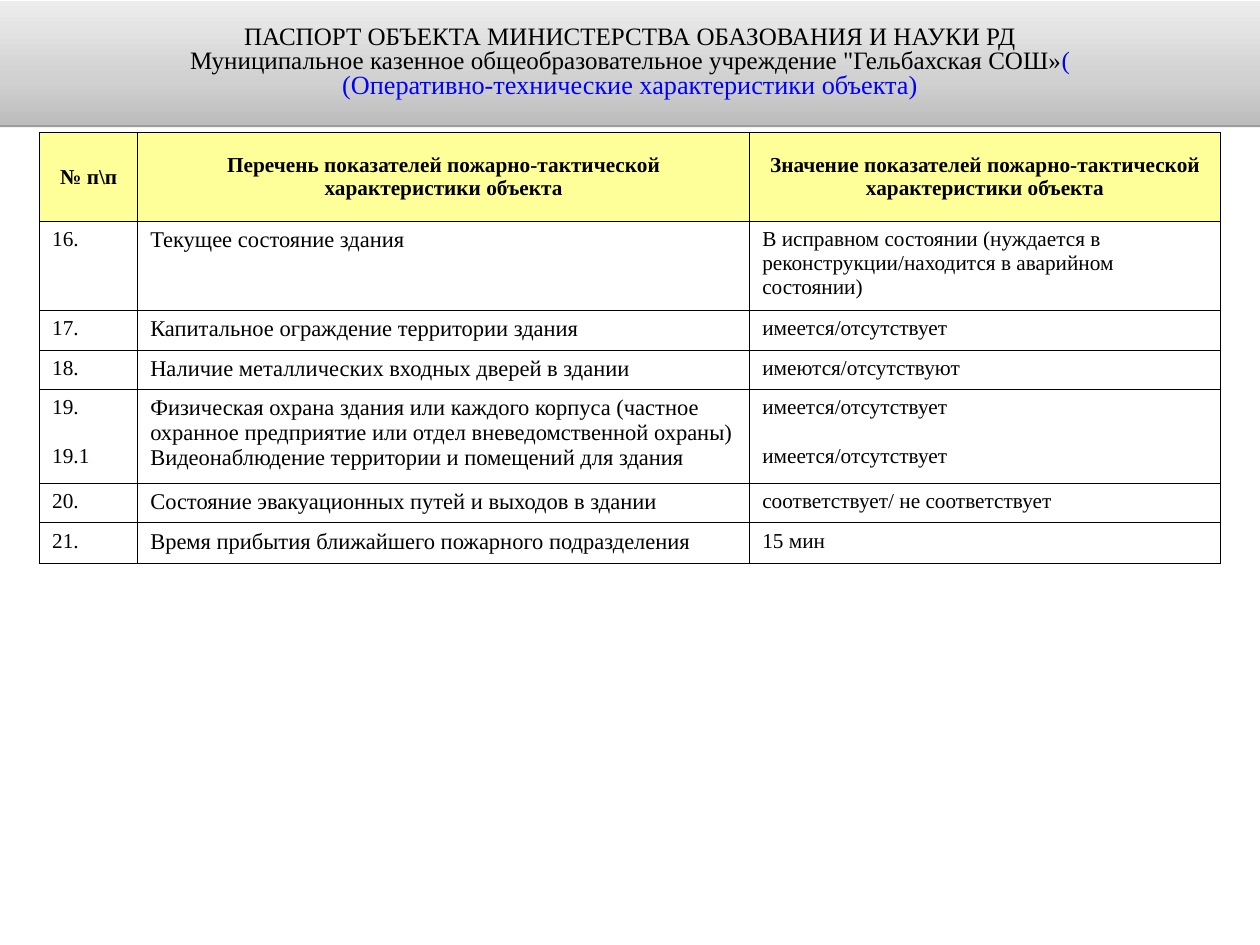
"""Build the fire-safety passport slide: a title band above a table of indicators."""
from dataclasses import dataclass

from lxml.etree import SubElement
from pptx import Presentation
from pptx.dml.color import RGBColor as Rgb
from pptx.enum.text import MSO_ANCHOR as Anchor, MSO_AUTO_SIZE as AutoSize, PP_ALIGN as Align
from pptx.oxml import parse_xml
from pptx.oxml.ns import nsdecls, qn
from pptx.util import Inches, Pt


@dataclass(frozen=True)
class Theme:
    font: str = "Times New Roman"
    ink: str = "000000"
    accent: str = "0000FF"
    header_fill: str = "FFFF99"
    body_fill: str = "FFFFFF"
    band: tuple = ((0, "BCBCBC"), (35, "D0D0D0"), (100, "EDEDED"))
    title_size: int = 20
    subtitle_size: int = 21
    cell_size: int = 17
    indicator_size: int = 18


theme = Theme()


def style_run(run, size, color=theme.ink, bold=False):
    run.font.name = theme.font
    run.font.size = Pt(size)
    run.font.bold = bold
    run.font.color.rgb = Rgb.from_string(color)


def add_borders(cell):
    properties = cell._tc.get_or_add_tcPr()
    for side in ("lnL", "lnR", "lnT", "lnB"):
        line = SubElement(properties, qn(f"a:{side}"), w=str(Pt(1)))
        fill = SubElement(line, qn("a:solidFill"))
        SubElement(fill, qn("a:srgbClr"), val=theme.ink)


prs = Presentation()
prs.slide_width, prs.slide_height = Inches(14), Inches(10.5)
slide = prs.slides.add_slide(prs.slide_layouts[5])

heading = slide.shapes.title
heading.left, heading.top = Inches(0), Inches(0.01)
heading.width, heading.height = Inches(14), Inches(1.38)
stops = "".join(
    f'<a:gs pos="{position * 1000}"><a:srgbClr val="{color}"/></a:gs>'
    for position, color in theme.band
)
heading_properties = heading._element.spPr
heading_properties.append(parse_xml(
    f'<a:gradFill {nsdecls("a")} rotWithShape="1"><a:gsLst>{stops}</a:gsLst>'
    '<a:lin ang="16200000" scaled="0"/></a:gradFill>'
))
heading_properties.append(parse_xml(
    f'<a:effectLst {nsdecls("a")}><a:outerShdw blurRad="0" dist="{Pt(1.6)}" dir="5400000" '
    f'rotWithShape="0"><a:srgbClr val="{theme.ink}"><a:alpha val="38000"/></a:srgbClr>'
    '</a:outerShdw></a:effectLst>'
))

heading_frame = heading.text_frame
heading_frame.word_wrap = True
heading_frame.auto_size = AutoSize.NONE
heading_frame.vertical_anchor = Anchor.MIDDLE
heading_frame.margin_left = heading_frame.margin_right = Inches(0.12)
heading_frame.margin_top = heading_frame.margin_bottom = Inches(0.06)
heading_lines = [
    [("ПАСПОРТ ОБЪЕКТА МИНИСТЕРСТВА ОБАЗОВАНИЯ И НАУКИ РД", theme.title_size, theme.ink)],
    [
        ('Муниципальное казенное общеобразовательное учреждение "Гельбахская СОШ»',
         theme.title_size, theme.ink),
        ("(", theme.title_size, theme.accent),
    ],
    [("(Оперативно-технические характеристики объекта)", theme.subtitle_size, theme.accent)],
]
heading_frame.text = "\n".join("" for _ in heading_lines)
for paragraph, pieces in zip(heading_frame.paragraphs, heading_lines):
    paragraph.alignment = Align.CENTER
    paragraph.line_spacing = 0.8
    paragraph.space_before = Pt(0)
    for words, size, color in pieces:
        run = paragraph.add_run()
        run.text = words
        style_run(run, size, color)

indicators = [
    ("№ п\\п",
     "Перечень показателей пожарно-тактической характеристики объекта",
     "Значение показателей пожарно-тактической характеристики объекта"),
    ("16.", "Текущее состояние здания",
     "В исправном состоянии (нуждается в реконструкции/находится в аварийном состоянии)"),
    ("17.", "Капитальное ограждение территории здания", "имеется/отсутствует"),
    ("18.", "Наличие металлических входных дверей в здании", "имеются/отсутствуют"),
    ("19.\n19.1",
     "Физическая охрана здания или каждого корпуса (частное охранное предприятие "
     "или отдел вневедомственной охраны)\n"
     "Видеонаблюдение территории и помещений для здания",
     "имеется/отсутствует\nимеется/отсутствует"),
    ("20.", "Состояние эвакуационных путей и выходов в здании",
     "соответствует/ не соответствует"),
    ("21.", "Время прибытия ближайшего пожарного подразделения", "15 мин"),
]
column_widths = (1.09, 6.8, 5.23)
row_heights = (0.99, 0.99, 0.44, 0.44, 1.04, 0.44, 0.45)

passport = slide.shapes.add_table(
    len(indicators), len(column_widths),
    Inches(0.44), Inches(1.47), Inches(13.12), Inches(4.8),
).table
passport.first_row = passport.horz_banding = False
for column, width in zip(passport.columns, column_widths):
    column.width = Inches(width)

for row_index, (row, height, entries) in enumerate(zip(passport.rows, row_heights, indicators)):
    row.height = Inches(height)
    is_header = row_index == 0
    for column_index, (cell, entry) in enumerate(zip(row.cells, entries)):
        is_indicator = column_index == 1 and not is_header
        size = theme.indicator_size if is_indicator else theme.cell_size
        add_borders(cell)
        cell.fill.solid()
        cell.fill.fore_color.rgb = Rgb.from_string(
            theme.header_fill if is_header else theme.body_fill
        )
        cell.margin_left = cell.margin_right = Inches(0.14)
        cell.margin_top = cell.margin_bottom = Inches(0.07)
        cell.vertical_anchor = Anchor.MIDDLE if is_header else Anchor.TOP
        cell.text_frame.text = entry
        for line_index, paragraph in enumerate(cell.text_frame.paragraphs):
            paragraph.alignment = Align.CENTER if is_header else Align.LEFT
            if line_index and not is_indicator:
                paragraph.space_before = Pt(19.5)
            for run in paragraph.runs:
                style_run(run, size, bold=is_header)

prs.save("out.pptx")
